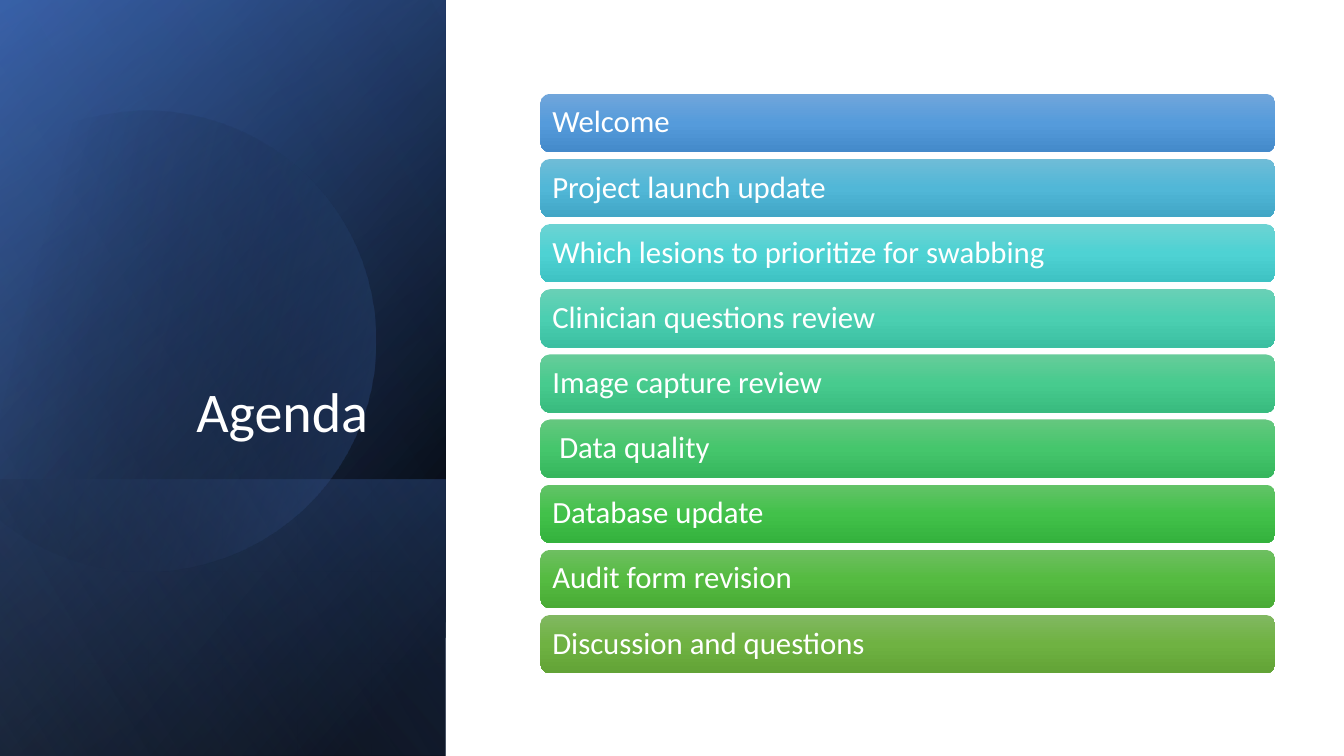
from math import cos, sin, radians

from lxml.etree import SubElement
from pptx import Presentation
from pptx.dml.color import RGBColor
from pptx.enum.shapes import MSO_SHAPE as Kind
from pptx.enum.text import MSO_ANCHOR as Anchor, MSO_AUTO_SIZE as Fit, PP_ALIGN as Align
from pptx.oxml.ns import qn
from pptx.util import Inches, Pt

HEAD = "Agenda"
ITEMS = [
    ("Welcome", "71A6DB", "559BDB", "448ACA"),
    ("Project launch update", "6FBCD7", "51B7D7", "41A6C6"),
    ("Which lesions to prioritize for swabbing", "6CD3D3", "4ED2D3", "3EC2C3"),
    ("Clinician questions review", "69D0B6", "4BCFB1", "3BBFA1"),
    ("Image capture review", "67CC9A", "47CB8E", "39BB7F"),
    (" Data quality", "65C77F", "45C66C", "36B65D"),
    ("Database update", "63C368", "42C14A", "34B23D"),
    ("Audit form revision", "6EBF61", "55BB41", "49AB35"),
    ("Discussion and questions", "81B861", "6FB242", "62A336"),
]
FULL = (-1.54, 1.54, 7.5, 4.42)
FOOT = (0.84, 3.92, 2.74, 4.42)
BACK = [
    (FULL, 50, [(8, "000000", 100), (100, "2F5597", 100)]),
    (FULL, 30, [(0, "000000", 0), (99, "4472C4", 46)]),
    (FOOT, 130, [(2, "4472C4", 29), (100, "000000", 30)]),
]
SHEEN = (FULL, 120, [(0, "000000", 0), (99, "8FAADC", 11)])
DISC = [(29, "000000", 0), (100, "4472C4", 43)]
START = (1.49, 1.1)
ARCS = [
    ((2.46, 1.12), (3.35, 1.77), (3.63, 2.75)),
    ((3.98, 3.97), (3.28, 5.23), (2.07, 5.58)),
    ((1.31, 5.8), (0.53, 5.61), (-0.03, 5.14)),
    ((-0.15, 5.03),),
    ((-0.15, 1.75),),
    ((0, 1.61),),
    ((0.23, 1.42), (0.5, 1.28), (0.8, 1.19)),
    ((1.03, 1.13), (1.26, 1.1), (1.49, 1.1)),
]
HUB = (1.58, 3.35)
TURN = 343.9
STEPS = 20
BAR_X, BAR_W, BAR_H = 5.36, 7.29, 0.58
TOP, LAST = 0.93, 6.1


def hue(code):
    return RGBColor.from_string(code)


def paint(shape, stops, angle):
    shape.shadow.inherit = False
    shape.line.fill.background()
    shape.fill.background()
    props = shape.element.spPr
    old = props.find(qn("a:noFill"))
    grad = SubElement(props, qn("a:gradFill"), rotWithShape="1")
    props.replace(old, grad)
    marks = SubElement(grad, qn("a:gsLst"))
    for pos, code, alpha in stops:
        mark = SubElement(marks, qn("a:gs"), pos=str(pos * 1000))
        tint = SubElement(mark, qn("a:srgbClr"), val=str(hue(code)))
        if alpha < 100:
            SubElement(tint, qn("a:alpha"), val=str(alpha * 1000))
    SubElement(grad, qn("a:lin"), ang=str(angle * 60000), scaled="0")


def panel(shapes, box, angle, stops):
    rect = shapes.add_shape(Kind.RECTANGLE, *map(Inches, box))
    rect.rotation = 90
    rect.element.spPr.find(qn("a:xfrm")).set("flipH", "1")
    paint(rect, stops, angle)


def outline():
    dots, at = [START], START
    for arc in ARCS:
        if len(arc) == 1:
            dots += arc
        else:
            for n in range(1, STEPS + 1):
                t = n / STEPS
                u = 1 - t
                parts = (u ** 3, 3 * u * u * t, 3 * u * t * t, t ** 3)
                dots.append(tuple(
                    sum(w * p[k] for w, p in zip(parts, (at, *arc)))
                    for k in (0, 1)))
        at = arc[-1]
    return dots


def unturn(dot):
    a = radians(-TURN)
    x, y = dot[0] - HUB[0], dot[1] - HUB[1]
    return (Inches(HUB[0] + x * cos(a) - y * sin(a)),
            Inches(HUB[1] + x * sin(a) + y * cos(a)))


def disc(shapes):
    first, *rest = map(unturn, outline())
    pen = shapes.build_freeform(*first)
    pen.add_line_segments(rest, close=True)
    shape = pen.convert_to_shape()
    shape.rotation = TURN
    paint(shape, DISC, 30)


def write(shape, text, size, align, anchor):
    frame = shape.text_frame
    frame.word_wrap = True
    frame.auto_size = Fit.NONE
    frame.vertical_anchor = anchor
    para = frame.paragraphs[0]
    para.alignment = align
    para.line_spacing = 0.9
    run = para.add_run()
    run.text = text
    run.font.name = "Calibri"
    run.font.size = Pt(size)
    run.font.color.rgb = hue("FFFFFF")
    return frame


def title(slide):
    head = slide.shapes.title
    head.left, head.top = Inches(0.64), Inches(1.84)
    head.width, head.height = Inches(3.41), Inches(2.62)
    frame = write(head, HEAD, 40, Align.RIGHT, Anchor.BOTTOM)
    frame.margin_right = Inches(0.4)
    head.element.getparent().append(head.element)


def bars(shapes):
    pitch = (LAST - TOP) / (len(ITEMS) - 1)
    for n, (text, *codes) in enumerate(ITEMS):
        box = (BAR_X, TOP + n * pitch, BAR_W, BAR_H)
        bar = shapes.add_shape(Kind.ROUNDED_RECTANGLE, *map(Inches, box))
        paint(bar, [(pos, code, 100) for pos, code in zip((0, 50, 100), codes)], 90)
        frame = write(bar, text, 22, Align.LEFT, Anchor.MIDDLE)
        frame.margin_left = frame.margin_right = Inches(0.09)


def main():
    deck = Presentation()
    deck.slide_width, deck.slide_height = Inches(13.33), Inches(7.5)
    slide = deck.slides.add_slide(deck.slide_layouts[5])
    shapes = slide.shapes
    for part in BACK:
        panel(shapes, *part)
    disc(shapes)
    panel(shapes, *SHEEN)
    title(slide)
    bars(shapes)
    deck.save("out.pptx")


if __name__ == "__main__":
    main()
